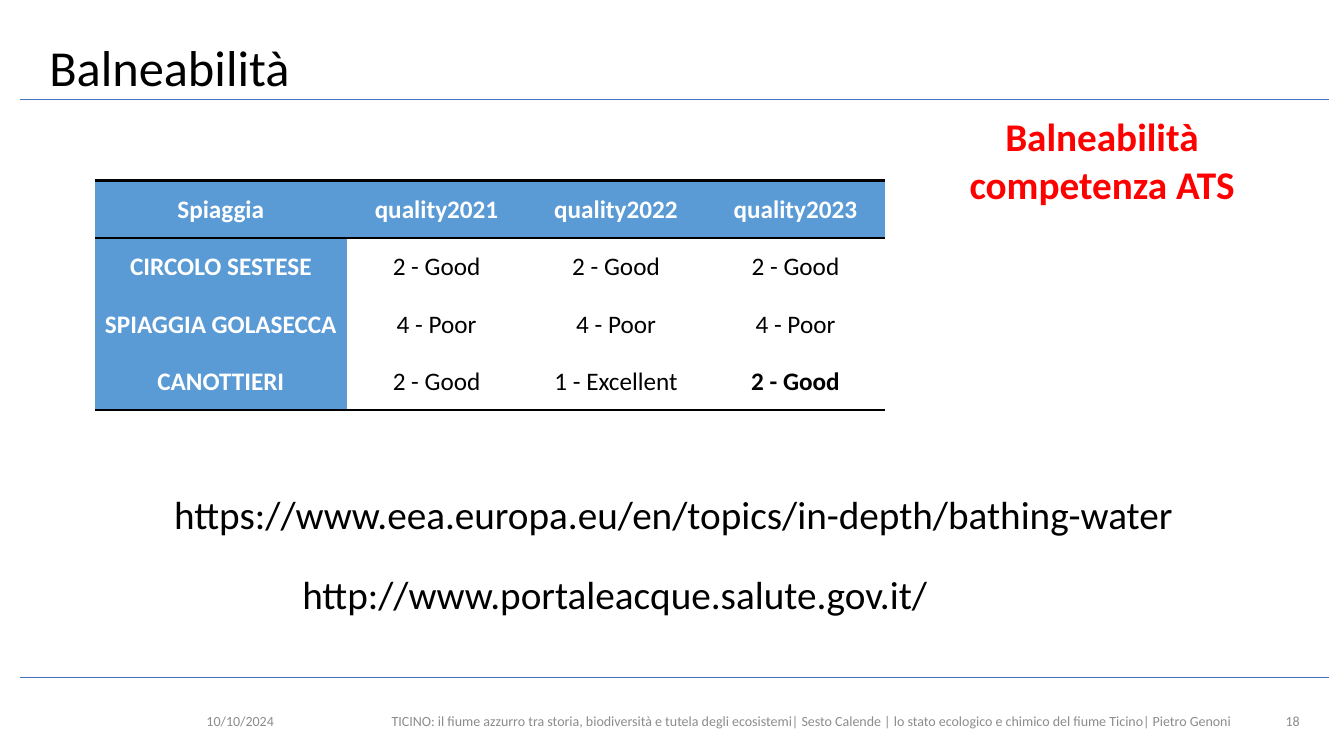
from dataclasses import dataclass

from lxml.etree import SubElement
from pptx import Presentation
from pptx.dml.color import RGBColor as RGB
from pptx.enum.shapes import MSO_CONNECTOR as Connector
from pptx.enum.text import MSO_ANCHOR as Anchor, PP_ALIGN as Align
from pptx.oxml.ns import qn
from pptx.util import Inches, Pt


@dataclass(frozen=True)
class Theme:
    font: str = "Calibri"
    black: str = "000000"
    white: str = "FFFFFF"
    grey: str = "8C8C8C"
    red: str = "FF0000"
    rule: str = "4472C4"
    header: str = "5B9BD5"
    title_size: int = 36
    body_size: int = 28
    table_size: int = 18
    footer_size: int = 10
    rule_width: float = 0.5
    border_width: int = 2


THEME = Theme()


def write(frame, text, size=THEME.body_size, color=THEME.black, bold=False,
          align=Align.LEFT, anchor=Anchor.TOP, spacing=None):
    frame.word_wrap = True
    frame.vertical_anchor = anchor
    paragraph = frame.paragraphs[0]
    paragraph.alignment = align
    if spacing:
        paragraph.line_spacing = spacing
    run = paragraph.add_run()
    run.text = text
    run.font.name = THEME.font
    run.font.size = Pt(size)
    run.font.bold = bold
    run.font.color.rgb = RGB.from_string(color)


class SlideBuilder:
    def __init__(self, slide, theme):
        self.slide = slide
        self.theme = theme

    def rule(self, y):
        line = self.slide.shapes.add_connector(
            Connector.STRAIGHT, Inches(0.2), Inches(y), Inches(13.18), Inches(y))
        line.line.color.rgb = RGB.from_string(self.theme.rule)
        line.line.width = Pt(self.theme.rule_width)
        SubElement(line.element.spPr, qn("a:effectLst"))

    def text(self, left, top, width, height, text, **style):
        box = self.slide.shapes.add_textbox(*map(Inches, (left, top, width, height)))
        write(box.text_frame, text, **style)

    def footer(self, left, width, text, align=Align.LEFT):
        self.text(left, 6.95, width, 0.4, text, size=self.theme.footer_size,
                  color=self.theme.grey, align=align, anchor=Anchor.MIDDLE)

    def borders(self, cell, ruled_sides):
        properties = cell._tc.get_or_add_tcPr()
        for side in "LRTB":
            border = SubElement(properties, qn(f"a:ln{side}"),
                                w=str(Pt(self.theme.border_width)))
            if side in ruled_sides:
                fill = SubElement(border, qn("a:solidFill"))
                SubElement(fill, qn("a:srgbClr"), val=self.theme.black)
            else:
                SubElement(border, qn("a:noFill"))

    def table(self, left, top, widths, row_height, rows, bold_cells):
        table = self.slide.shapes.add_table(
            len(rows), len(widths), Inches(left), Inches(top),
            Inches(sum(widths)), Inches(row_height * len(rows))).table
        for column, width in zip(table.columns, widths):
            column.width = Inches(width)
        for r, values in enumerate(rows):
            table.rows[r].height = Inches(row_height)
            ruled_sides = ("T" if r < 2 else "") + ("B" if r in (0, len(rows) - 1) else "")
            for c, value in enumerate(values):
                cell = table.cell(r, c)
                heading = r == 0 or c == 0
                self.borders(cell, ruled_sides)
                cell.fill.solid()
                cell.fill.fore_color.rgb = RGB.from_string(
                    self.theme.header if heading else self.theme.white)
                cell.margin_left = cell.margin_right = cell.margin_top = Inches(0.01)
                cell.margin_bottom = 0
                write(cell.text_frame, value, size=self.theme.table_size,
                      color=self.theme.white if heading else self.theme.black,
                      bold=heading or (r, c) in bold_cells, align=Align.CENTER)
                cell.vertical_anchor = Anchor.MIDDLE


def main():
    deck = Presentation()
    deck.slide_width, deck.slide_height = Inches(13.33), Inches(7.5)
    page = SlideBuilder(deck.slides.add_slide(deck.slide_layouts[6]), THEME)

    for y in (0.99, 6.72):
        page.rule(y)
    page.text(0.39, 0.4, 12.59, 0.6, "Balneabilità", size=THEME.title_size,
              anchor=Anchor.MIDDLE, spacing=0.9)

    page.footer(1.95, 0.96, "10/10/2024")
    page.footer(2.91, 10.27,
                "TICINO: il fiume azzurro tra storia, biodiversità e tutela degli "
                "ecosistemi| Sesto Calende | lo stato ecologico e chimico del fiume "
                "Ticino| Pietro Genoni", align=Align.CENTER)
    page.footer(12.56, 0.43, "18", align=Align.RIGHT)

    page.text(9.18, 1.07, 3.5, 1.04, "Balneabilità competenza ATS",
              color=THEME.red, bold=True, align=Align.CENTER)
    page.text(2.9, 5.61, 7.53, 0.57, "http://www.portaleacque.salute.gov.it/")
    page.text(1.63, 4.82, 10.93, 0.57,
              "https://www.eea.europa.eu/en/topics/in-depth/bathing-water")

    beach_quality = [
        ("Spiaggia", "quality2021", "quality2022", "quality2023"),
        ("CIRCOLO SESTESE", "2 - Good", "2 - Good", "2 - Good"),
        ("SPIAGGIA GOLASECCA", "4 - Poor", "4 - Poor", "4 - Poor"),
        ("CANOTTIERI", "2 - Good", "1 - Excellent", "2 - Good"),
    ]
    page.table(0.94, 1.79, [2.5] + [1.78] * 3, 0.57, beach_quality, {(3, 3)})

    deck.save("out.pptx")


if __name__ == "__main__":
    main()
